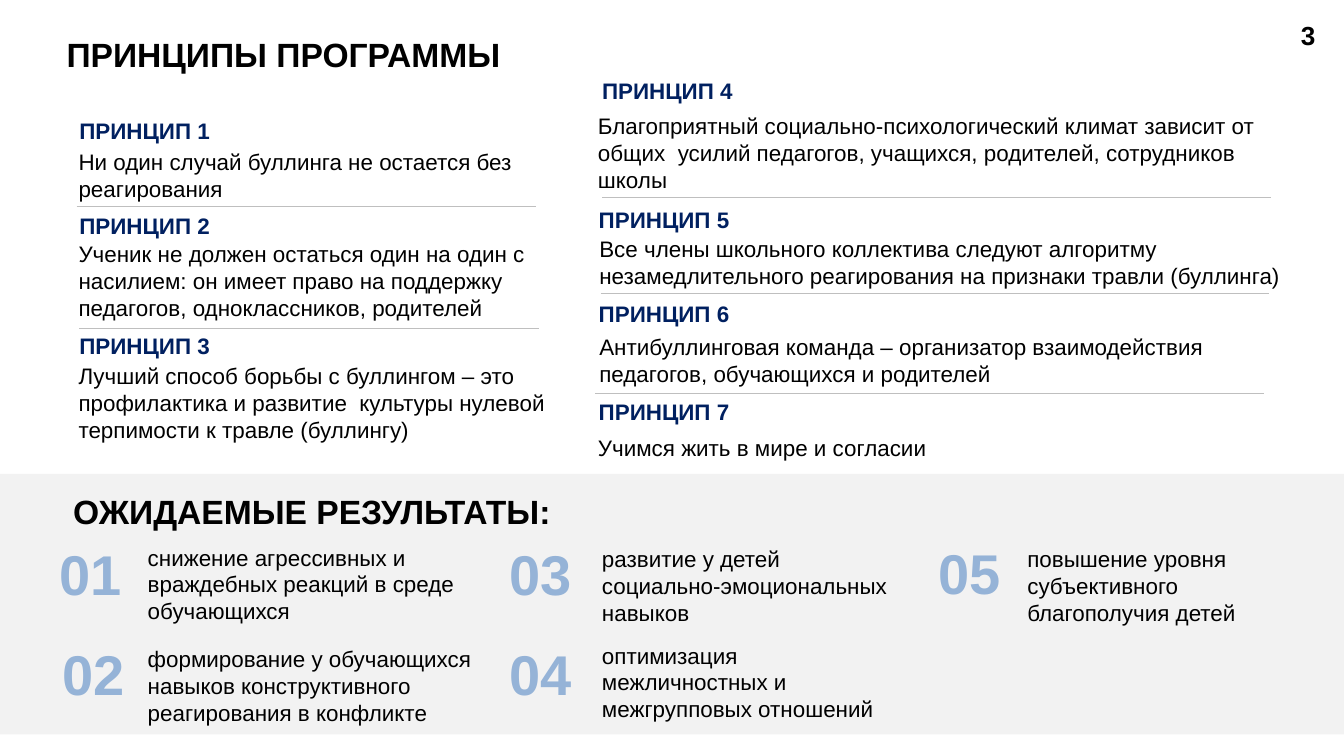
from dataclasses import dataclass

from lxml import etree
from pptx import Presentation
from pptx import util as u
from pptx.dml.color import RGBColor
from pptx.enum import shapes, text
from pptx.oxml.ns import qn


@dataclass(frozen=True)
class Theme:
    font: str = "Arial"
    ink: str = "000000"
    accent: str = "002060"
    numeral: str = "95B3D7"
    band: str = "F2F2F2"
    rule: str = "BFBFBF"
    title_size: int = 36
    page_size: int = 28
    body_size: int = 24
    numeral_size: int = 60


PADDED = (0.1, 0.05, 0.1, 0.05)
FLUSH = (0, 0, 0, 0)
NUMERAL_INSETS = (0, 0.01, 0, 0)


class SlideBuilder:
    def __init__(self, page, theme):
        self.page = page
        self.theme = theme

    def band(self, left, top, width, height):
        band = self.page.shapes.add_shape(
            shapes.MSO_SHAPE.RECTANGLE, *map(u.Inches, (left, top, width, height)))
        band.shadow.inherit = False
        band.fill.solid()
        band.fill.fore_color.rgb = RGBColor.from_string(self.theme.band)
        band.line.fill.background()

    def label(self, words, left, top, width, height, size, color,
              bold=False, insets=PADDED, wrap=True):
        box = self.page.shapes.add_textbox(*map(u.Inches, (left, top, width, height)))
        frame = box.text_frame
        frame.word_wrap = wrap
        frame.auto_size = text.MSO_AUTO_SIZE.SHAPE_TO_FIT_TEXT
        (frame.margin_left, frame.margin_top,
         frame.margin_right, frame.margin_bottom) = map(u.Inches, insets)
        para = frame.paragraphs[0]
        para.text = words
        para.font.name = self.theme.font
        para.font.size = u.Pt(size)
        para.font.bold = bold
        para.font.color.rgb = RGBColor.from_string(color)

    def title(self, words, left, top, width, height, **options):
        self.label(words, left, top, width, height,
                   self.theme.title_size, self.theme.ink, bold=True, **options)

    def body(self, words, left, top, width, height):
        self.label(words, left, top, width, height,
                   self.theme.body_size, self.theme.ink)

    def principle(self, number, heading_at, words, body_at):
        self.label(f"ПРИНЦИП {number}", *heading_at, 2.51, 0.4,
                   self.theme.body_size, self.theme.accent, bold=True, insets=FLUSH)
        self.body(words, *body_at)

    def result(self, number, numeral_at, words, body_at):
        self.label(f"{number:02}", *numeral_at, 1.28, 1.02, self.theme.numeral_size,
                   self.theme.numeral, bold=True, insets=NUMERAL_INSETS)
        self.body(words, *body_at, 1.31)

    def rule(self, left, top, width):
        line = self.page.shapes.add_connector(
            shapes.MSO_CONNECTOR.STRAIGHT,
            *map(u.Inches, (left, top, left + width, top)))
        line.line.color.rgb = RGBColor.from_string(self.theme.rule)
        line.line.width = u.Pt(0.75)
        etree.SubElement(line._element.spPr, qn("a:effectLst"))


# Heading position, wording, body box
PRINCIPLES = [
    ((1.18, 1.74), "Ни один случай буллинга не остается без реагирования",
     (1.07, 2.16, 8.02, 0.91)),
    ((1.18, 3.16), "Ученик не должен остаться один на один с насилием: он имеет "
     "право на поддержку педагогов, одноклассников, родителей",
     (1.07, 3.53, 7.88, 1.31)),
    ((1.18, 4.94), "Лучший способ борьбы с буллингом – это профилактика и развитие  "
     "культуры нулевой терпимости к травле (буллингу)",
     (1.07, 5.34, 7.88, 1.31)),
    ((8.96, 1.14), "Благоприятный социально-психологический климат зависит от общих  "
     "усилий педагогов, учащихся, родителей, сотрудников школы",
     (8.8, 1.62, 10.39, 1.31)),
    ((8.91, 3.06), "Все члены школьного коллектива следуют алгоритму "
     "незамедлительного реагирования на признаки травли (буллинга)",
     (8.82, 3.45, 10.92, 0.91)),
    ((8.91, 4.46), "Антибуллинговая команда – организатор взаимодействия педагогов, "
     "обучающихся и родителей",
     (8.82, 4.91, 10.2, 0.91)),
    ((8.91, 5.92), "Учимся жить в мире и согласии", (8.8, 6.41, 8.5, 0.5)),
]

# Numeral position, wording, body left, top and width
RESULTS = [
    ((0.88, 8.02), "снижение агрессивных и враждебных реакций в среде обучающихся",
     (2.1, 8.04, 5.27)),
    ((0.93, 9.5), "формирование у обучающихся навыков конструктивного реагирования "
     "в конфликте", (2.1, 9.55, 5.87)),
    ((7.58, 8.02), "развитие у детей социально-эмоциональных навыков",
     (8.86, 8.06, 4.61)),
    ((7.58, 9.51), "оптимизация межличностных и межгрупповых отношений",
     (8.86, 9.5, 4.61)),
    ((13.96, 8.01), "повышение уровня субъективного благополучия детей",
     (15.19, 8.06, 4.6)),
]

LEFT_RULE, RIGHT_RULE = 6.84, 9.95
RULES = [
    (1.14, 3.07, LEFT_RULE), (1.18, 4.88, LEFT_RULE),
    (8.96, 2.94, RIGHT_RULE), (8.94, 4.37, RIGHT_RULE), (8.86, 5.85, RIGHT_RULE),
]


def main():
    deck = Presentation()
    deck.slide_width, deck.slide_height = u.Inches(20), u.Inches(11.25)
    theme = Theme()
    builder = SlideBuilder(deck.slides.add_slide(deck.slide_layouts[6]), theme)

    builder.band(0, 7.05, 20, 3.88)
    builder.title("ПРИНЦИПЫ ПРОГРАММЫ", 0.99, 0.51, 7.48, 0.61, insets=FLUSH)
    for number, principle in enumerate(PRINCIPLES, 1):
        builder.principle(number, *principle)
    for rule in RULES:
        builder.rule(*rule)

    builder.title("ОЖИДАЕМЫЕ РЕЗУЛЬТАТЫ:", 0.99, 7.26, 7.67, 0.71, wrap=False)
    for number, result in enumerate(RESULTS, 1):
        builder.result(number, *result)
    builder.label("3", 19.26, 0.24, 0.7, 0.57, theme.page_size, theme.ink, bold=True)

    deck.save("out.pptx")


if __name__ == "__main__":
    main()
